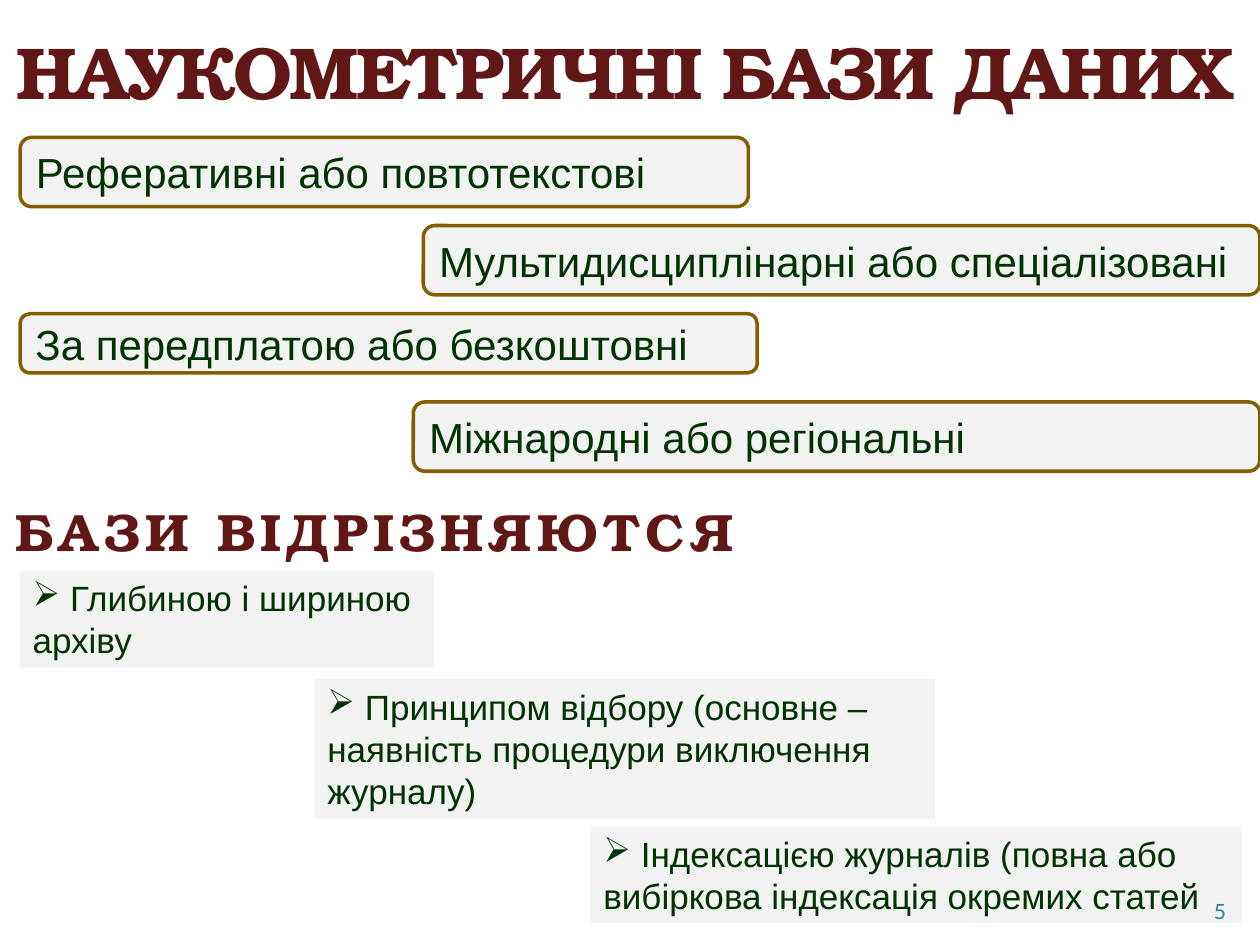
from lxml import etree
from pptx import Presentation
from pptx import util as u
from pptx.dml.color import RGBColor
from pptx.enum import shapes, text
from pptx.oxml.ns import qn

HEADING, BODY, NUMBER = "TeX Gyre Bonum", "Arial", "Lato"
MAROON, GREEN, TEAL = "621717", "003300", "318093"
PANEL, BORDER = "F2F2F2", "835E01"


def color(hex_string):
    return RGBColor.from_string(hex_string)


class SlideBuilder:
    def __init__(self, slide):
        self.slide = slide

    def set_text(self, shape, wording, size, font, ink, align=text.PP_ALIGN.LEFT,
                 anchor=text.MSO_ANCHOR.TOP, wrap=True, grow=False):
        frame = shape.text_frame
        frame.text = wording
        frame.word_wrap = wrap
        frame.vertical_anchor = anchor
        frame.auto_size = (text.MSO_AUTO_SIZE.SHAPE_TO_FIT_TEXT if grow
                           else text.MSO_AUTO_SIZE.NONE)
        paragraph = frame.paragraphs[0]
        paragraph.alignment = align
        paragraph.font.size = u.Pt(size)
        paragraph.font.name = font
        paragraph.font.color.rgb = color(ink)
        return paragraph

    def heading(self, shape, wording, size, spacing, wrap):
        """Bold centred heading; spacing is the letter spacing in points."""
        paragraph = self.set_text(shape, wording, size, HEADING, MAROON,
                                  text.PP_ALIGN.CENTER, wrap=wrap, grow=True)
        paragraph.font.bold = True
        letters = paragraph.runs[0]._r.get_or_add_rPr()
        letters.set("spc", str(int(spacing * 100)))

    def title(self, wording, left, top, width, height):
        title = self.slide.shapes.title
        title.left, title.top = u.Inches(left), u.Inches(top)
        title.width, title.height = u.Inches(width), u.Inches(height)
        self.heading(title, wording, 42, -1.5, wrap=True)

    def text_box(self, left, top, width, height):
        return self.slide.shapes.add_textbox(
            u.Inches(left), u.Inches(top), u.Inches(width), u.Inches(height))

    def subtitle(self, wording, *place):
        self.heading(self.text_box(*place), wording, 30, 3, wrap=False)

    def page_number(self, wording, *place):
        self.set_text(self.text_box(*place), wording, 12, NUMBER, TEAL,
                      text.PP_ALIGN.RIGHT)

    def panel(self, preset, left, top, width, height):
        panel = self.slide.shapes.add_shape(
            preset, u.Inches(left), u.Inches(top), u.Inches(width), u.Inches(height))
        panel.shadow.inherit = False
        panel.fill.solid()
        panel.fill.fore_color.rgb = color(PANEL)
        return panel

    def category(self, wording, *place):
        panel = self.panel(shapes.MSO_SHAPE.ROUNDED_RECTANGLE, *place)
        panel.line.color.rgb = color(BORDER)
        panel.line.width = u.Pt(2)
        self.set_text(panel, wording, 24, BODY, GREEN, anchor=text.MSO_ANCHOR.MIDDLE)

    def difference(self, wording, *place):
        panel = self.panel(shapes.MSO_SHAPE.RECTANGLE, *place)
        panel.line.fill.background()
        paragraph = self.set_text(panel, " " + wording, 20, BODY, GREEN, grow=True)
        properties = paragraph._p.get_or_add_pPr()
        bullet = etree.Element(qn("a:buChar"), char="➢")
        properties.insert(0, bullet)


def main():
    deck = Presentation()
    deck.slide_width, deck.slide_height = u.Inches(10), u.Inches(7.5)
    builder = SlideBuilder(deck.slides.add_slide(deck.slide_layouts[5]))

    builder.title("НАУКОМЕТРИЧНІ БАЗИ ДАНИХ", -0.31, 0.16, 10.55, 0.81)

    categories = [
        ("Реферативні або повтотекстові", 0.16, 5.78, 0.55),
        ("Мультидисциплінарні або спеціалізовані", 3.36, 6.64, 0.55),
        ("За передплатою або безкоштовні", 0.16, 5.85, 0.47),
        ("Міжнародні або регіональні", 3.28, 6.72, 0.55),
    ]
    for row, (wording, left, width, height) in enumerate(categories):
        builder.category(wording, left, 1.09 + 0.7 * row, width, height)

    builder.subtitle("БАЗИ ВІДРІЗНЯЮТСЯ", 0, 3.91, 5.95, 0.61)

    differences = [
        ("Глибиною і шириною архіву", 0.16, 4.53, 3.28, 0.77),
        ("Індексацією журналів (повна або вибіркова індексація окремих статей",
         4.69, 6.56, 5.16, 0.77),
        ("Принципом відбору (основне – наявність процедури виключення журналу)",
         2.5, 5.39, 4.92, 1.11),
    ]
    for wording, *place in differences:
        builder.difference(wording, *place)

    builder.page_number("5", 9, 7.08, 0.83, 0.27)
    deck.save("out.pptx")


if __name__ == "__main__":
    main()
